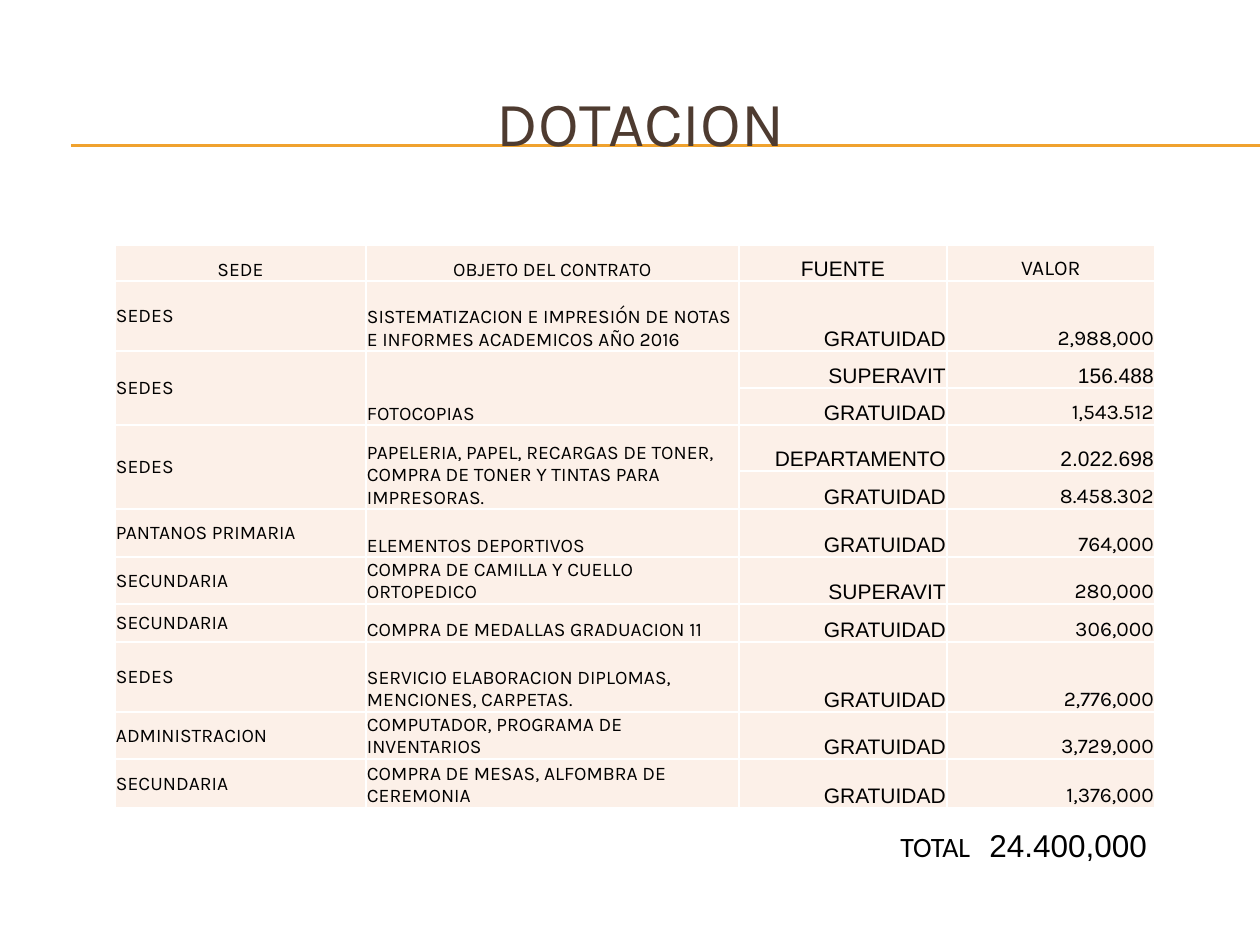
from lxml import etree
from pptx import Presentation
from pptx.dml.color import RGBColor
from pptx.enum.shapes import MSO_CONNECTOR
from pptx.enum.text import MSO_ANCHOR, MSO_AUTO_SIZE, PP_ALIGN
from pptx.oxml.ns import qn
from pptx.util import Pt

PX = 914400 // 126
LEFT, MID, RIGHT = PP_ALIGN.LEFT, PP_ALIGN.CENTER, PP_ALIGN.RIGHT
CENTER, BOTTOM = MSO_ANCHOR.MIDDLE, MSO_ANCHOR.BOTTOM
FIT = MSO_AUTO_SIZE.SHAPE_TO_FIT_TEXT
STRAIGHT = MSO_CONNECTOR.STRAIGHT

BLACK = RGBColor(0x00, 0x00, 0x00)
WHITE = RGBColor(0xFF, 0xFF, 0xFF)
BROWN = RGBColor(0x4E, 0x3B, 0x30)
AMBER = RGBColor(0xF0, 0xA2, 0x2E)
CREAM = RGBColor(0xFC, 0xF0, 0xE8)

HEAD = ("SEDE", "OBJETO DEL CONTRATO", "FUENTE", "VALOR")
# A row whose first two cells are None belongs to the contract above it.
ROWS = (
    ("SEDES", "SISTEMATIZACION E IMPRESIÓN DE NOTAS E INFORMES ACADEMICOS AÑO 2016",
     "GRATUIDAD", "2,988,000"),
    ("SEDES", "FOTOCOPIAS", "SUPERAVIT", "156.488"),
    (None, None, "GRATUIDAD", "1,543.512"),
    ("SEDES", "PAPELERIA, PAPEL, RECARGAS DE TONER, COMPRA DE TONER Y TINTAS PARA IMPRESORAS.",
     "DEPARTAMENTO", "2.022.698"),
    (None, None, "GRATUIDAD", "8.458.302"),
    ("PANTANOS PRIMARIA", "ELEMENTOS DEPORTIVOS", "GRATUIDAD", "764,000"),
    ("SECUNDARIA", "COMPRA DE CAMILLA Y CUELLO ORTOPEDICO", "SUPERAVIT", "280,000"),
    ("SECUNDARIA", "COMPRA DE MEDALLAS GRADUACION 11", "GRATUIDAD", "306,000"),
    ("SEDES", "SERVICIO ELABORACION DIPLOMAS, MENCIONES, CARPETAS.",
     "GRATUIDAD", "2,776,000"),
    ("ADMINISTRACION", "COMPUTADOR, PROGRAMA DE INVENTARIOS", "GRATUIDAD", "3,729,000"),
    ("SECUNDARIA", "COMPRA DE MESAS, ALFOMBRA DE CEREMONIA", "GRATUIDAD", "1,376,000"),
)
WIDTHS = (251, 373, 208, 208)
HEIGHTS = (36, 70, 37, 37, 46, 38, 48, 47, 38, 70, 47, 49)
FONTS = ("Karla", "Karla", "Arial", "Karla")
SIZES = (11, 11, 12, 12)
ALIGNS = (LEFT, LEFT, RIGHT, RIGHT)
PLAIN = ("156.488", "2.022.698")  # values set in Arial


def add_run(para, text, font, size, color=BLACK):
    run = para.add_run()
    run.text = text
    run.font.name = font
    run.font.size = Pt(size)
    run.font.color.rgb = color


def add_rule(slide, x, y, w):
    rule = slide.shapes.add_connector(
        STRAIGHT, x * PX, y * PX, (x + w) * PX, y * PX)
    rule.line.color.rgb = AMBER
    rule.line.width = Pt(0.75)
    etree.SubElement(rule._element.spPr, qn("a:effectLst"))


def add_title(slide, x, y, w, h):
    for gap in (82, 83):
        add_rule(slide, x + 29, y + gap, w - 8)
    title = slide.shapes.title
    title.left, title.top, title.width, title.height = (
        n * PX for n in (x, y, w, h))
    slide.shapes._spTree.append(title._element)  # in front of the rules
    frame = title.text_frame
    frame.vertical_anchor = CENTER
    para = frame.paragraphs[0]
    para.alignment = MID
    add_run(para, "DOTACION", "Karla", 36, BROWN)


def style_cell(cell):
    cell.margin_left = cell.margin_right = cell.margin_top = PX
    cell.margin_bottom = 0
    props = cell._tc.get_or_add_tcPr()
    for side in ("lnL", "lnR", "lnT", "lnB"):
        edge = etree.SubElement(props, qn(f"a:{side}"), w=str(Pt(1)))
        fill = etree.SubElement(edge, qn("a:solidFill"))
        etree.SubElement(fill, qn("a:srgbClr"), val=str(WHITE))
    cell.fill.solid()
    cell.fill.fore_color.rgb = CREAM


def add_grid(slide, x, y):
    data = (HEAD, *ROWS)
    table = slide.shapes.add_table(
        len(data), len(HEAD), x * PX, y * PX,
        sum(WIDTHS) * PX, sum(HEIGHTS) * PX).table
    for col, width in zip(table.columns, WIDTHS):
        col.width = width * PX
    for row, height in zip(table.rows, HEIGHTS):
        row.height = height * PX
    for r, line in enumerate(data):
        for c, text in enumerate(line):
            cell = table.cell(r, c)
            style_cell(cell)
            if text is None:
                table.cell(r - 1, c).merge(cell)
                continue
            cell.vertical_anchor = CENTER if r and c == 0 else BOTTOM
            para = cell.text_frame.paragraphs[0]
            para.alignment = ALIGNS[c] if r else MID
            font = "Arial" if text in PLAIN else FONTS[c]
            add_run(para, text, font, SIZES[c])


def add_total(slide, x, y, w, h):
    box = slide.shapes.add_textbox(x * PX, y * PX, w * PX, h * PX)
    frame = box.text_frame
    frame.word_wrap = True
    frame.auto_size = FIT
    para = frame.paragraphs[0]
    stops = etree.SubElement(para._p.get_or_add_pPr(), qn("a:tabLst"))
    etree.SubElement(stops, qn("a:tab"), pos=str(89 * PX), algn="l")
    add_run(para, "TOTAL", "Calibri", 16)
    add_run(para, "\t", "Karla", 18)
    add_run(para, "24.400,000", "Arial", 18)


def main():
    deck = Presentation()
    deck.slide_width, deck.slide_height = 1260 * PX, 945 * PX
    slide = deck.slides.add_slide(deck.slide_layouts[5])
    add_title(slide, 42, 63, 1197, 116)
    add_grid(slide, 115, 245)
    add_total(slide, 888, 820, 277, 50)
    deck.save("out.pptx")


if __name__ == "__main__":
    main()
